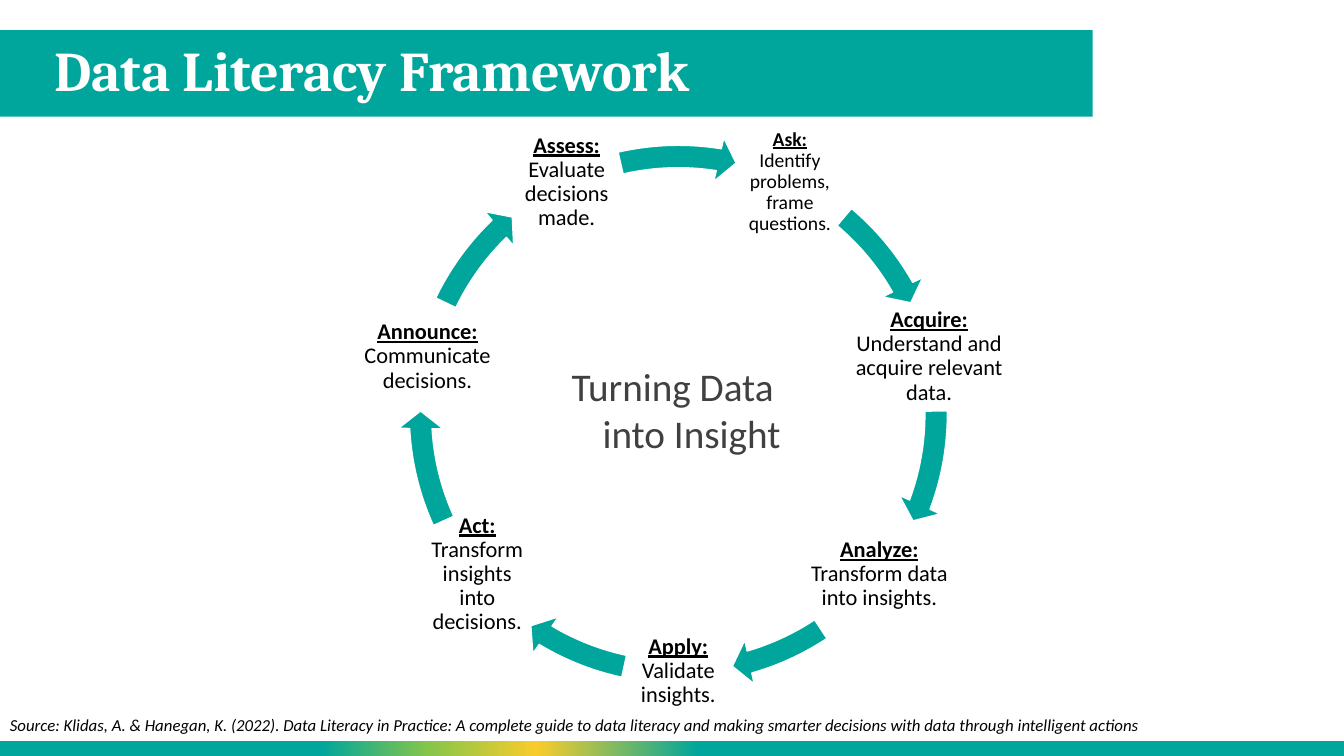
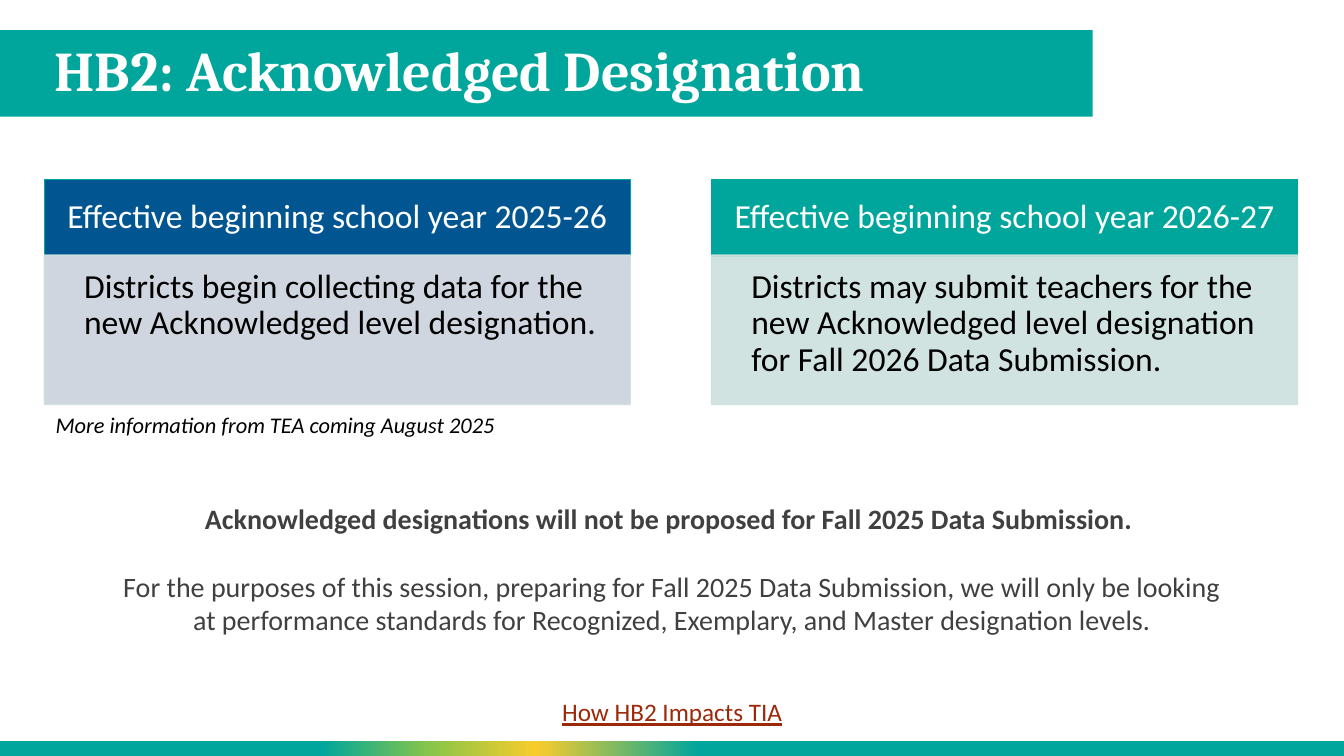
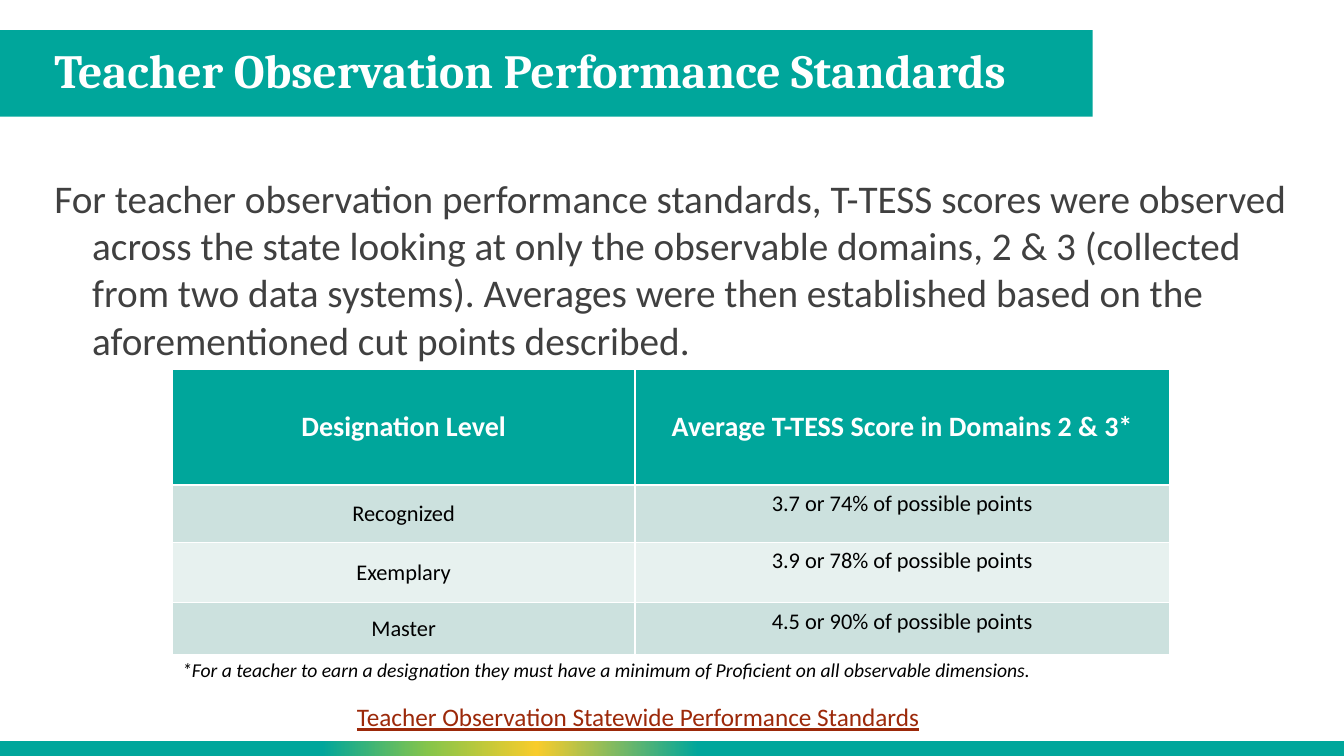
import math

from lxml import etree
from pptx import Presentation
from pptx import util as u
from pptx.dml.color import RGBColor
from pptx.enum import shapes as kinds
from pptx.enum import text as t
from pptx.oxml import ns

TEAL = RGBColor(0x00, 0xA6, 0x9B)
BLUE = RGBColor(0x01, 0x56, 0x92)
GREY_BLUE = RGBColor(0xD0, 0xD6, 0xDF)
PALE_TEAL = RGBColor(0xCC, 0xE1, 0xDE)
PALEST_TEAL = RGBColor(0xE7, 0xF1, 0xEF)
YELLOW = RGBColor(0xF8, 0xCC, 0x2B)
GREEN = RGBColor(0x87, 0xC5, 0x4A)
RUST = RGBColor(0x9C, 0x29, 0x0A)
CHARCOAL = RGBColor(0x40, 0x40, 0x40)
BLACK = RGBColor(0x00, 0x00, 0x00)
WHITE = RGBColor(0xFF, 0xFF, 0xFF)

LEFT, CENTER = t.PP_ALIGN.LEFT, t.PP_ALIGN.CENTER
TOP, MIDDLE = t.MSO_ANCHOR.TOP, t.MSO_ANCHOR.MIDDLE
RECTANGLE = kinds.MSO_SHAPE.RECTANGLE
TITLE_ONLY, TITLE_AND_CONTENT = 5, 1
MARGINS = (0.25, 0.13, 0.25, 0.13)
FOOTER_STOPS = ((0, TEAL), (48, TEAL), (60, YELLOW), (68, GREEN), (76, TEAL), (100, TEAL))

CYCLE_CENTER = (17.09, 10.43)
CYCLE_RADIUS = 6.48
CYCLE_STEPS = (
    ("Ask:", "Identify problems, frame questions.", 14, 2.72, 310.08, 330.46),
    ("Acquire:", "Understand and acquire relevant data.", 16, 3.84, 359.28, 20.52),
    ("Analyze:", "Transform data into insights.", 16, 3.96, 56.46, 73.97),
    ("Apply:", "Validate insights.", 16, 2.72, 102.12, 120.97),
    ("Act:", "Transform insights into decisions.", 16, 2.72, 155.57, 176.81),
    ("Announce:", "Communicate decisions.", 16, 4.44, 205.62, 226.01),
    ("Assess:", "Evaluate decisions made.", 16, 2.72, 257.06, 279.03),
)
PANELS = (
    (1.12, "2025-26", BLUE, GREY_BLUE,
     "Districts begin collecting data for the new Acknowledged level designation."),
    (17.93, "2026-27", TEAL, PALE_TEAL,
     "Districts may submit teachers for the new Acknowledged level designation "
     "for Fall 2026 Data Submission."),
)
SCORE_ROWS = (
    ("Designation Level", "Average T-TESS Score in Domains 2 & 3*"),
    ("Recognized", "3.7 or 74% of possible points"),
    ("Exemplary", "3.9 or 78% of possible points"),
    ("Master", "4.5 or 90% of possible points"),
)


def set_values(target, values):
    """Set each attribute named in the dict."""
    for name, value in values.items():
        setattr(target, name, value)


def place(shape, box):
    """Move a shape to a box given in centimetres."""
    set_values(shape, dict(zip(("left", "top", "width", "height"), map(u.Cm, box))))


def write(paragraph, words, size, color, font="Calibri", align=LEFT, layout=None, **style):
    """Write one formatted run in a paragraph."""
    set_values(paragraph, {"alignment": align, **(layout or {})})
    run = paragraph.add_run()
    run.text = words
    set_values(run.font, {"name": font, "size": u.Pt(size), **style})
    run.font.color.rgb = color


def prepare_frame(frame, anchor=TOP, margins=MARGINS):
    """Set wrapping, anchor and margins, and return the first paragraph."""
    sides = ("margin_left", "margin_top", "margin_right", "margin_bottom")
    set_values(frame, {"word_wrap": True, "auto_size": t.MSO_AUTO_SIZE.NONE,
                       "vertical_anchor": anchor, **dict(zip(sides, map(u.Cm, margins)))})
    return frame.paragraphs[0]


def add_text(slide, box, words, size, color=BLACK, **style):
    """Add a text box with one paragraph and return its frame."""
    frame = slide.shapes.add_textbox(*map(u.Cm, box)).text_frame
    write(prepare_frame(frame), words, size, color, **style)
    return frame


def add_filled(slide, kind, box, fill, line=None):
    """Add a flat preset shape with a fill and an optional thin line."""
    shape = slide.shapes.add_shape(kind, *map(u.Cm, box))
    shape.shadow.inherit = False
    shape.fill.solid()
    shape.fill.fore_color.rgb = fill
    if line is None:
        shape.line.fill.background()
    else:
        shape.line.color.rgb = line
        shape.line.width = u.Pt(1)
    return shape


def soften(shape, color):
    """Make one colour of a shape ninety percent opaque."""
    for node in shape.element.spPr.iter(ns.qn("a:srgbClr")):
        if node.get("val") == str(color):
            etree.SubElement(node, ns.qn("a:alpha"), val="90000")


def fill_footer(shape):
    """Give the footer band its gradient of several stops."""
    gradient = etree.Element(ns.qn("a:gradFill"), rotWithShape="1")
    stops = etree.SubElement(gradient, ns.qn("a:gsLst"))
    for percent, color in FOOTER_STOPS:
        stop = etree.SubElement(stops, ns.qn("a:gs"), pos=str(percent * 1000))
        etree.SubElement(stop, ns.qn("a:srgbClr"), val=str(color))
    etree.SubElement(gradient, ns.qn("a:lin"), ang="10800000", scaled="0")
    properties = shape.element.spPr
    properties.replace(properties.find(ns.qn("a:solidFill")), gradient)


def add_bands(presentation, slide):
    """Put the title and footer bands on the slide master."""
    title_band = add_filled(slide, RECTANGLE, (-0.03, 0.76, 27.56, 2.18), TEAL)
    footer_band = add_filled(slide, RECTANGLE, (-0.03, 18.67, 33.89, 0.38), TEAL)
    fill_footer(footer_band)
    tree = presentation.slide_master.shapes.element
    for index, band in enumerate((title_band, footer_band), 2):
        tree.insert(index, band.element)


def add_slide(presentation, layout, title, size=40):
    """Add a slide with its formatted title."""
    slide = presentation.slides.add_slide(presentation.slide_layouts[layout])
    shape = slide.shapes.title
    place(shape, (1.12, 0.76, 26.44, 2.18))
    write(prepare_frame(shape.text_frame, MIDDLE), title, size, WHITE, font="Cambria",
          layout={"line_spacing": 0.9}, bold=True)
    return slide


def fill_body(slide, box, words, align=LEFT):
    """Place the body placeholder and write it without a bullet."""
    shape = slide.placeholders[1]
    place(shape, box)
    paragraph = prepare_frame(shape.text_frame)
    properties = paragraph._p.get_or_add_pPr()
    set_values(properties, {"marL": 0, "indent": 0})
    etree.SubElement(properties, ns.qn("a:buNone"))
    write(paragraph, words, 28, CHARCOAL, align=align, layout={"space_before": u.Pt(0)})


def add_cycle(slide):
    """Draw the ring of steps and the arrows between them."""
    center_x, center_y = CYCLE_CENTER
    height = 2.72
    for index, (name, detail, size, width, start, end) in enumerate(CYCLE_STEPS):
        angle = 2 * math.pi * (index - 1.25) / len(CYCLE_STEPS)
        left = center_x + CYCLE_RADIUS * math.cos(angle) - width / 2
        top = center_y + CYCLE_RADIUS * math.sin(angle) - height / 2
        label = slide.shapes.add_textbox(*map(u.Cm, (left, top, width, height)))
        frame = label.text_frame
        first = prepare_frame(frame, MIDDLE, (0.05,) * 4)
        spacing = {"line_spacing": 0.9}
        write(first, name, size, BLACK, align=CENTER, layout=spacing, bold=True, underline=True)
        write(frame.add_paragraph(), detail, size, BLACK, align=CENTER, layout=spacing)
        arrow = add_filled(slide, kinds.MSO_SHAPE.CIRCULAR_ARROW,
                           (10.03, 3.38, 14.12, 14.12), TEAL, WHITE)
        for position, value in enumerate((0.04, 2.35, end * 0.6, start * 0.6, 0.04)):
            arrow.adjustments[position] = value


def add_panel(slide, left, year, head_fill, body_fill, words):
    """Draw a heading box above a description box."""
    spacing = {"line_spacing": 0.9}
    head = add_filled(slide, RECTANGLE, (left, 4.52, 14.76, 1.93), head_fill, TEAL)
    write(prepare_frame(head.text_frame, MIDDLE, (0.48, 0.28, 0.48, 0.28)),
          f"Effective beginning school year {year}", 24, WHITE, align=CENTER, layout=spacing)
    body = add_filled(slide, RECTANGLE, (left, 6.43, 14.76, 3.76), body_fill, PALE_TEAL)
    soften(body, PALE_TEAL)
    write(prepare_frame(body.text_frame, TOP, (1, 0.36, 0.48, 0.53)),
          words, 24, BLACK, layout=spacing)


def add_score_table(slide):
    """Add the table of scores by designation level."""
    table = slide.shapes.add_table(len(SCORE_ROWS), 2, *map(u.Cm, (4.34, 9.3, 25.12, 7.19))).table
    for column, width in zip(table.columns, (11.66, 13.46)):
        column.width = u.Cm(width)
    for index, (row, height) in enumerate(zip(table.rows, (2.92, 1.45, 1.52, 1.3))):
        row.height = u.Cm(height)
        header = index == 0
        fill = TEAL if header else (PALEST_TEAL, PALE_TEAL)[index % 2]
        for column, words in enumerate(SCORE_ROWS[index]):
            cell = row.cells[column]
            cell.fill.solid()
            cell.fill.fore_color.rgb = fill
            cell.vertical_anchor = MIDDLE if header or column == 0 else TOP
            write(cell.text_frame.paragraphs[0], words, 20 if header else 16,
                  WHITE if header else BLACK, align=CENTER, bold=header)


def build_framework(presentation):
    """Build the data literacy cycle slide."""
    slide = add_slide(presentation, TITLE_AND_CONTENT, "Data Literacy Framework")
    add_bands(presentation, slide)
    fill_body(slide, (13.87, 8.99, 6.15, 2.62), "Turning Data into Insight", CENTER)
    add_cycle(slide)
    add_text(slide, (0, 17.88, 32.49, 0.76),
             "Source: Klidas, A. & Hanegan, K. (2022). Data Literacy in Practice: A complete guide to "
             "data literacy and making smarter decisions with data through intelligent actions",
             12, italic=True)


def build_designation(presentation):
    """Build the acknowledged designation slide."""
    slide = add_slide(presentation, TITLE_ONLY, "HB2: Acknowledged Designation")
    for panel in PANELS:
        add_panel(slide, *panel)
    add_text(slide, (13.72, 17.42, 6.43, 1.02), "How HB2 Impacts TIA", 18, RUST,
             align=CENTER, underline=True)
    frame = add_text(slide, (2.77, 12.52, 28.32, 3.33),
                     "Acknowledged designations will not be proposed for Fall 2025 Data Submission. ",
                     20, CHARCOAL, align=CENTER, bold=True)
    write(frame.add_paragraph(),
          "For the purposes of this session, preparing for Fall 2025 Data Submission, we will only be "
          "looking at performance standards for Recognized, Exemplary, and Master designation levels.",
          20, CHARCOAL, align=CENTER, layout={"space_before": u.Pt(24)})
    add_text(slide, (1.12, 10.24, 11.63, 0.94), "More information from TEA coming August 2025", 16,
             align=CENTER, italic=True)


def build_standards(presentation):
    """Build the observation standards slide."""
    slide = add_slide(presentation, TITLE_AND_CONTENT,
                      "Teacher Observation Performance Standards", 34)
    fill_body(slide, (1.12, 4.27, 31.8, 12.37),
              "For teacher observation performance standards, T-TESS scores were observed across the "
              "state looking at only the observable domains, 2 & 3 (collected from two data systems). "
              "Averages were then established based on the aforementioned cut points described.")
    add_score_table(slide)
    add_text(slide, (4.34, 16.46, 25.12, 0.86),
             "*For a teacher to earn a designation they must have a minimum of Proficient on all "
             "observable dimensions.", 14, italic=True)
    add_text(slide, (8.74, 17.55, 15.27, 1.02),
             "Teacher Observation Statewide Performance Standards", 18, RUST, underline=True)


def main():
    """Build and save the presentation."""
    presentation = Presentation()
    set_values(presentation, {"slide_width": u.Cm(33.86), "slide_height": u.Cm(19.05)})
    build_framework(presentation)
    build_designation(presentation)
    build_standards(presentation)
    presentation.save("out.pptx")


if __name__ == "__main__":
    main()
